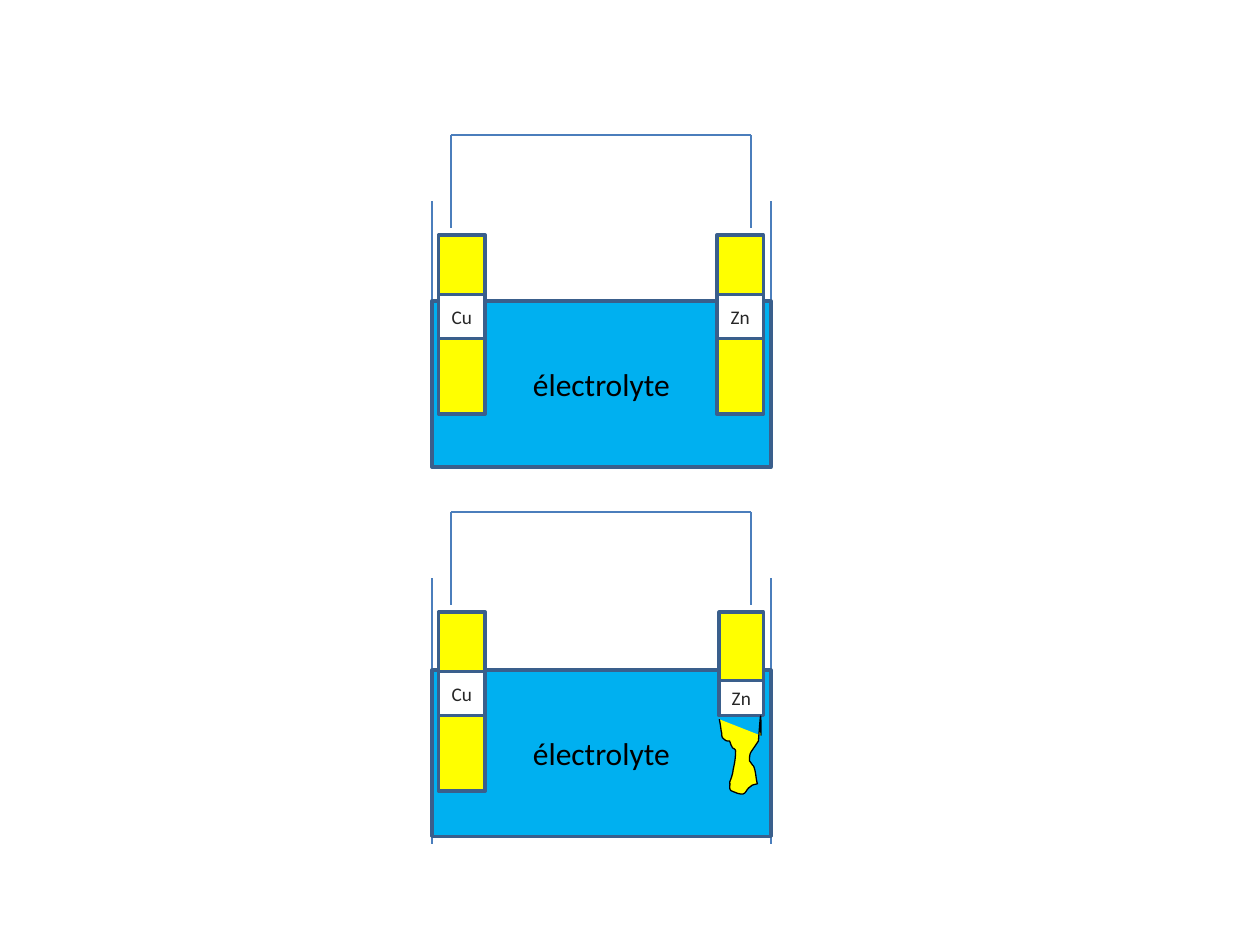
from lxml.etree import SubElement
from pptx import Presentation
from pptx.dml.color import RGBColor
from pptx.enum.shapes import MSO_CONNECTOR, MSO_SHAPE
from pptx.enum.text import MSO_ANCHOR, PP_ALIGN
from pptx.oxml.ns import qn
from pptx.util import Cm, Pt

BLACK = RGBColor(0x00, 0x00, 0x00)
WHITE = RGBColor(0xFF, 0xFF, 0xFF)
YELLOW = RGBColor(0xFF, 0xFF, 0x00)
ELECTROLYTE_BLUE = RGBColor(0x00, 0xB0, 0xF0)
OUTLINE_BLUE = RGBColor(0x3A, 0x5F, 0x8C)
WIRE_BLUE = RGBColor(0x4B, 0x7E, 0xBC)
LABEL_GREY = RGBColor(0x26, 0x26, 0x26)

# Horizontal layout and vertical step between the cells, in cm
TANK_LEFT, TANK_RIGHT = 8.71, 15.54
COPPER_LEFT, ELECTRODE_WIDTH = 8.84, 0.94
WIRE_LEFT, WIRE_RIGHT = 9.09, 15.14
CELL_STEP = 7.6

# Corroded zinc: start point, then cubic curves (two controls and an end), in cm
CORROSION_START = (14.5, 14.5)
CORROSION_CURVES = [
    ((14.53, 14.61), (14.53, 14.71), (14.55, 14.78)),
    ((14.55, 14.83), (14.55, 14.88), (14.61, 14.91)),
    ((14.63, 14.94), (14.68, 14.94), (14.71, 14.94)),
    ((14.73, 14.99), (14.73, 15.01), (14.76, 15.06)),
    ((14.76, 15.09), (14.83, 15.09), (14.83, 15.14)),
    ((14.83, 15.27), (14.81, 15.39), (14.78, 15.52)),
    ((14.78, 15.6), (14.71, 15.77), (14.71, 15.77)),
    ((14.73, 15.82), (14.68, 15.93), (14.76, 15.95)),
    ((15.09, 16.1), (14.99, 15.93), (15.14, 15.85)),
    ((15.16, 15.82), (15.21, 15.82), (15.27, 15.8)),
    ((15.24, 15.72), (15.24, 15.54), (15.19, 15.44)),
    ((15.16, 15.42), (15.14, 15.37), (15.11, 15.34)),
    ((15.11, 15.29), (15.11, 15.21), (15.14, 15.16)),
    ((15.19, 15.09), (15.29, 14.94), (15.29, 14.94)),
    ((15.34, 14.3), (15.34, 14.27), (15.34, 14.83)),
]


def curve_points(start, curves, steps=8):
    """Return points along a chain of cubic curves, in slide units."""
    points = []
    for first, second, end in curves:
        for step in range(1, steps + 1):
            t = step / steps
            weights = ((1 - t) ** 3, 3 * t * (1 - t) ** 2, 3 * t ** 2 * (1 - t), t ** 3)
            corners = (start, first, second, end)
            points.append(tuple(
                Cm(sum(weight * corner[axis] for weight, corner in zip(weights, corners)))
                for axis in (0, 1)))
        start = end
    return points


class CellDrawing:
    font_name = "Calibri"

    def __init__(self, slide):
        self.slide = slide
        self.group = None

    def start_group(self):
        self.group = self.slide.shapes.add_group_shape()

    def paint(self, shape, fill, line, width):
        shape.shadow.inherit = False
        shape.fill.solid()
        shape.fill.fore_color.rgb = fill
        shape.line.color.rgb = line
        shape.line.width = Pt(width)

    def line(self, x1, y1, x2, y2, width):
        connector = self.group.shapes.add_connector(
            MSO_CONNECTOR.STRAIGHT, Cm(x1), Cm(y1), Cm(x2), Cm(y2))
        connector.line.color.rgb = WIRE_BLUE
        connector.line.width = Pt(width)
        SubElement(connector._element.spPr, qn("a:effectLst"))

    def box(self, left, top, width, height, fill, text="", size=11,
            color=LABEL_GREY, kind=MSO_SHAPE.RECTANGLE):
        shape = self.group.shapes.add_shape(
            kind, Cm(left), Cm(top), Cm(width), Cm(height))
        self.paint(shape, fill, OUTLINE_BLUE, 2)
        if text:
            frame = shape.text_frame
            frame.margin_left = frame.margin_right = 0
            frame.margin_top = frame.margin_bottom = 0
            frame.vertical_anchor = MSO_ANCHOR.MIDDLE
            paragraph = frame.paragraphs[0]
            paragraph.text = text
            paragraph.alignment = PP_ALIGN.CENTER
            paragraph.font.name = self.font_name
            paragraph.font.size = Pt(size)
            paragraph.font.color.rgb = color

    def electrode(self, name, left, top, width, height, label_top, label_height):
        self.box(left, top, width, height, YELLOW)
        self.box(left, label_top, width, label_height, WHITE, name)

    def corrosion(self):
        builder = self.group.shapes.build_freeform(
            *(Cm(value) for value in CORROSION_START))
        builder.add_line_segments(
            curve_points(CORROSION_START, CORROSION_CURVES), close=False)
        self.paint(builder.convert_to_shape(), YELLOW, BLACK, 0.75)

    def cell(self, offset, tank_top, zinc):
        self.start_group()
        # Tank walls and electrolyte
        for x in (TANK_LEFT, TANK_RIGHT):
            self.line(x, offset + 4.06, x, offset + 9.42, 1)
        self.box(TANK_LEFT, tank_top, TANK_RIGHT - TANK_LEFT, 3.35, ELECTROLYTE_BLUE,
                 "électrolyte", 18, BLACK, MSO_SHAPE.FLOWCHART_PROCESS)
        # Wire between the electrodes
        wire_top = offset + 2.72
        self.line(WIRE_LEFT, wire_top, WIRE_RIGHT, wire_top, 0.75)
        for x in (WIRE_LEFT, WIRE_RIGHT):
            self.line(x, wire_top, x, offset + 4.6, 0.75)
        # Electrodes
        self.electrode("Cu", COPPER_LEFT, offset + 4.74, ELECTRODE_WIDTH, 3.61,
                       offset + 5.94, 0.89)
        self.electrode("Zn", *zinc)


def main():
    presentation = Presentation()
    presentation.slide_width, presentation.slide_height = Cm(25.4), Cm(19.05)
    drawing = CellDrawing(presentation.slides.add_slide(presentation.slide_layouts[6]))

    # Lower cell: the zinc is eaten away
    drawing.cell(CELL_STEP, 13.51, (14.5, 12.34, 0.89, 1.98, 13.72, 0.71))
    drawing.corrosion()

    # Upper cell: both electrodes are whole
    drawing.cell(0, 6.07, (14.45, 4.74, ELECTRODE_WIDTH, 3.61, 5.94, 0.89))

    presentation.save("out.pptx")


if __name__ == "__main__":
    main()
